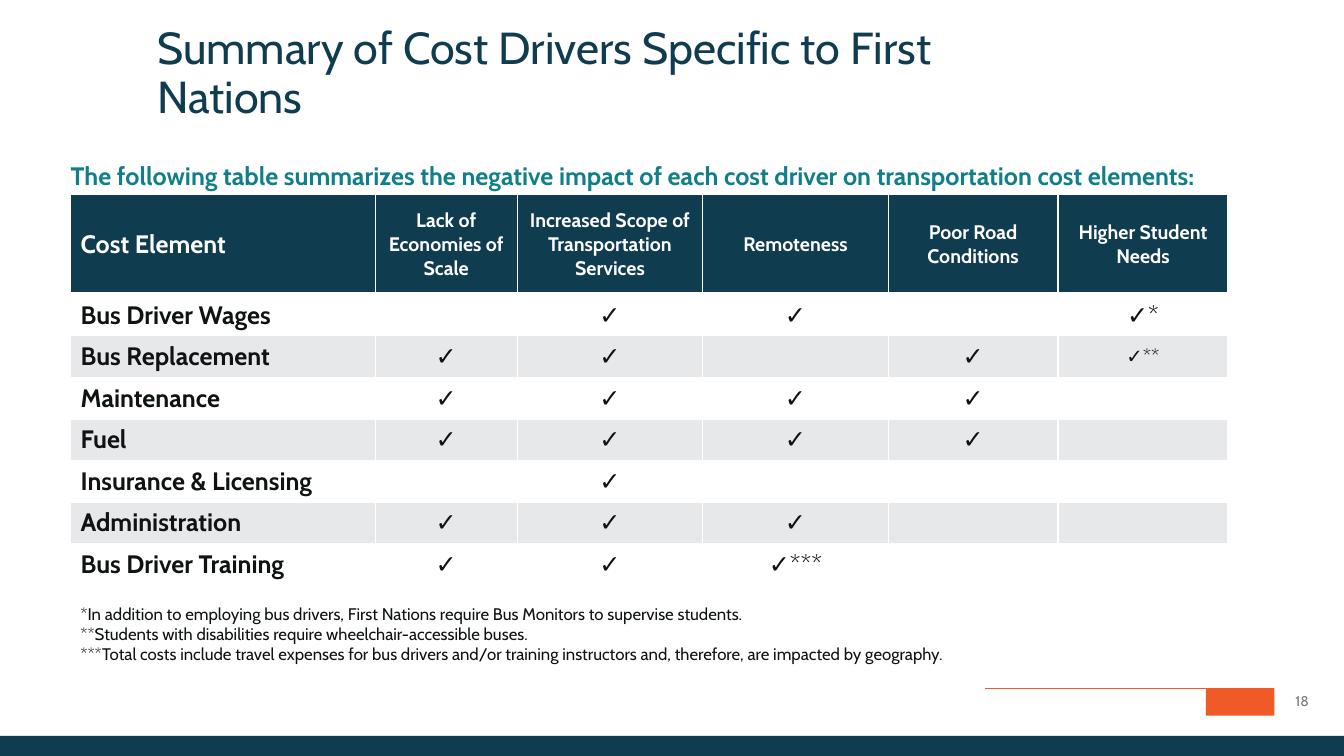
from dataclasses import dataclass

from lxml.etree import SubElement
from pptx import Presentation
from pptx.dml.color import RGBColor
from pptx.enum.shapes import MSO_CONNECTOR as Link, MSO_SHAPE as Form
from pptx.enum.text import MSO_ANCHOR as Anchor, MSO_AUTO_SIZE as Fit, PP_ALIGN as Align
from pptx.oxml.ns import qn
from pptx.util import Emu, Inches, Pt

WIDE, HIGH = Inches(13.33), Inches(7.5)
FONT = "Cabin"
NAVY, TEAL, ORANGE = "0F3C4F", "107F8A", "EF5A27"
INK, GRAY, BAND, WHITE = "0F1313", "797979", "E7E8E9", "FFFFFF"


@dataclass(frozen=True)
class Box:
    """A frame in percent of the slide's width and height."""
    x: float
    y: float
    w: float
    h: float

    def frame(self) -> tuple:
        return across(self.x), down(self.y), across(self.w), down(self.h)


@dataclass(frozen=True)
class Label:
    box: Box
    text: str
    style: dict
    inset: tuple = (0, 0.05, 0, 0.05)
    anchor: Anchor = Anchor.TOP


@dataclass(frozen=True)
class Block:
    box: Box
    color: str


@dataclass(frozen=True)
class Row:
    name: str
    marks: tuple


COLS = (22.66, 10.58, 13.8, 13.8, 12.64, 12.64)
HEAD_H, ROW_H = 13.2, 5.5
HEADS = ("Cost Element", "Lack of Economies of Scale",
         "Increased Scope of Transportation Services", "Remoteness",
         "Poor Road Conditions", "Higher Student Needs")
ROWS = (
    Row("Bus Driver Wages", ("", "✓", "✓", "", "✓*")),
    Row("Bus Replacement", ("✓", "✓", "", "✓", "✓**")),
    Row("Maintenance", ("✓", "✓", "✓", "✓", "")),
    Row("Fuel", ("✓", "✓", "✓", "✓", "")),
    Row("Insurance & Licensing", ("", "✓", "", "", "")),
    Row("Administration", ("✓", "✓", "✓", "", "")),
    Row("Bus Driver Training", ("✓", "✓", "✓***", "", "")),
)
NOTES = "\n".join((
    "*In addition to employing bus drivers, First Nations require Bus Monitors to supervise students.",
    "**Students with disabilities require wheelchair-accessible buses.",
    "***Total costs include travel expenses for bus drivers and/or training instructors and, "
    "therefore, are impacted by geography.",
))
BLOCKS = (
    Block(Box(89.72, 91.07, 5.1, 3.6), ORANGE),
    Block(Box(0, 97.33, 100, 2.67), NAVY),
)
LABELS = (
    Label(Box(94.82, 90.93, 4.13, 3.6), "18",
          dict(size=10, color=GRAY, align=Align.CENTER), anchor=Anchor.MIDDLE),
    Label(Box(5.25, 20.8, 89.57, 6.13),
          "The following table summarizes the negative impact of each cost driver "
          "on transportation cost elements:",
          dict(size=18, color=TEAL, bold=True, space=1.1), (0, 0, 0, 0)),
    Label(Box(5.25, 79.2, 81.25, 9.47), NOTES, dict(size=12), (0.1, 0.05, 0.1, 0.05)),
)


def across(share: float) -> Emu:
    return Emu(round(WIDE * share / 100))


def down(share: float) -> Emu:
    return Emu(round(HIGH * share / 100))


def rgb(code: str) -> RGBColor:
    return RGBColor.from_string(code)


def write(frame, text: str, *, size: float, color: str = INK, bold: bool = False,
          align: Align = Align.LEFT, space: float = 1.0) -> None:
    for i, line in enumerate(text.split("\n")):
        para = frame.add_paragraph() if i else frame.paragraphs[0]
        para.alignment, para.line_spacing = align, space
        para.space_before = Pt(0)
        if not line:
            continue
        run = para.add_run()
        run.text = line
        font = run.font
        font.name, font.size, font.bold = FONT, Pt(size), bold
        font.color.rgb = rgb(color)


def set_frame(frame, inset: tuple, anchor: Anchor) -> None:
    frame.word_wrap, frame.auto_size = True, Fit.NONE
    frame.vertical_anchor = anchor
    (frame.margin_left, frame.margin_top,
     frame.margin_right, frame.margin_bottom) = map(Inches, inset)


def add_title(slide, text: str, box: Box) -> None:
    title = slide.shapes.title
    title.left, title.top, title.width, title.height = box.frame()
    set_frame(title.text_frame, (0, 0, 0, 0), Anchor.TOP)
    write(title.text_frame, text, size=32, color=NAVY, space=0.9)


def add_block(slide, block: Block) -> None:
    shape = slide.shapes.add_shape(Form.RECTANGLE, *block.box.frame())
    shape.shadow.inherit = False
    shape.fill.solid()
    shape.fill.fore_color.rgb = rgb(block.color)
    shape.line.fill.background()


def add_label(slide, label: Label) -> None:
    frame = slide.shapes.add_textbox(*label.box.frame()).text_frame
    set_frame(frame, label.inset, label.anchor)
    write(frame, label.text, **label.style)


def add_rule(slide, left: float, right: float, y: float) -> None:
    rule = slide.shapes.add_connector(
        Link.STRAIGHT, across(left), down(y), across(right), down(y))
    rule.line.color.rgb, rule.line.width = rgb(ORANGE), Pt(1)
    SubElement(rule._element.spPr, qn("a:effectLst"))


def add_edges(cell, top: float, base: float) -> None:
    """Give the cell white borders, with top and base widths in points."""
    props = cell._tc.get_or_add_tcPr()
    for side, width in (("L", 1), ("R", 1), ("T", top), ("B", base)):
        edge = SubElement(props, qn(f"a:ln{side}"), w=str(Pt(width)))
        fill = SubElement(edge, qn("a:solidFill"))
        SubElement(fill, qn("a:srgbClr"), val=WHITE)


def add_cell(cell, text: str, row: int, col: int) -> None:
    head = row == 0
    add_edges(cell, 3 if row == 1 else 1, 3 if head else 1)
    cell.fill.solid()
    cell.fill.fore_color.rgb = rgb(NAVY if head else WHITE if row % 2 else BAND)
    cell.vertical_anchor = Anchor.MIDDLE
    small = (head and col > 0) or text == "✓**"
    write(cell.text_frame, text, size=14 if small else 18,
          color=WHITE if head else INK, bold=head or col == 0,
          align=Align.CENTER if col else Align.LEFT)


def add_grid(slide, x: float, y: float) -> None:
    lines = [HEADS] + [(row.name, *row.marks) for row in ROWS]
    box = Box(x, y, sum(COLS), HEAD_H + ROW_H * len(ROWS))
    table = slide.shapes.add_table(len(lines), len(COLS), *box.frame()).table
    table.first_row = table.horz_banding = False
    for col, share in zip(table.columns, COLS):
        col.width = across(share)
    for r, line in enumerate(lines):
        table.rows[r].height = down(ROW_H if r else HEAD_H)
        for c, text in enumerate(line):
            add_cell(table.cell(r, c), text, r, c)


def main() -> None:
    deck = Presentation()
    deck.slide_width, deck.slide_height = WIDE, HIGH
    slide = deck.slides.add_slide(deck.slide_layouts[5])
    add_title(slide, "Summary of Cost Drivers Specific to First Nations",
              Box(11.7, 3.47, 68.42, 6.4))
    for block in BLOCKS:
        add_block(slide, block)
    add_rule(slide, 73.29, 94.82, 91.07)
    add_grid(slide, 5.25, 25.73)
    for label in LABELS:
        add_label(slide, label)
    deck.save("out.pptx")


if __name__ == "__main__":
    main()
